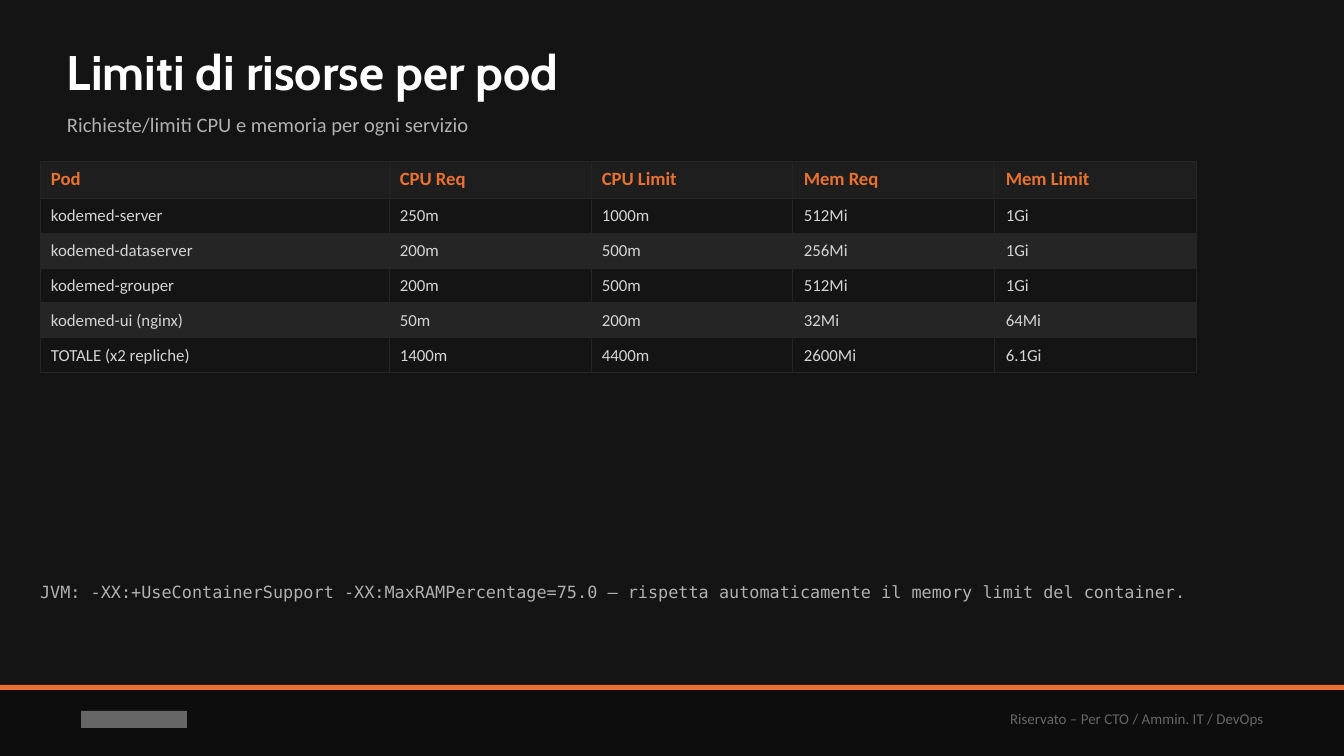
from lxml import etree
from pptx import Presentation
from pptx import util as u
from pptx.dml.color import RGBColor
from pptx.enum import shapes, text
from pptx.oxml import ns

PX = 914400 / 134.4
BACKGROUND = RGBColor(0x14, 0x14, 0x14)
FOOTER = RGBColor(0x0D, 0x0D, 0x0D)
ORANGE = RGBColor(0xE9, 0x71, 0x32)
WHITE = RGBColor(0xFF, 0xFF, 0xFF)
LIGHT = RGBColor(0xD4, 0xD4, 0xD4)
SILVER = RGBColor(0xB0, 0xB0, 0xB0)
GRAY = RGBColor(0x66, 0x66, 0x66)
HEADER = RGBColor(0x1E, 0x1E, 0x1E)
STRIPE = RGBColor(0x25, 0x25, 0x25)


def px(*lengths):
    return [u.Emu(round(length * PX)) for length in lengths]


def write(frame, words, size, color, font="Calibri", bold=False,
          align=text.PP_ALIGN.LEFT, inset=(0, 0)):
    frame.word_wrap = True
    frame.auto_size = text.MSO_AUTO_SIZE.NONE
    frame.vertical_anchor = text.MSO_ANCHOR.MIDDLE
    frame.margin_left, frame.margin_top = px(*inset)
    frame.margin_right, frame.margin_bottom = px(*inset)
    para = frame.paragraphs[0]
    para.alignment = align
    span = para.add_run()
    span.text = words
    span.font.size = u.Pt(size)
    span.font.name = font
    span.font.bold = bold
    span.font.color.rgb = color


deck = Presentation()
deck.slide_width, deck.slide_height = px(1344, 756)
page = deck.slides.add_slide(deck.slide_layouts[5])
page.background.fill.solid()
page.background.fill.fore_color.rgb = BACKGROUND

for left, top, width, height, color in [
    (0, 685, 1344, 71, FOOTER),
    (0, 685, 1344, 5, ORANGE),
    (81, 711, 106, 17, GRAY),
]:
    bar = page.shapes.add_shape(
        shapes.MSO_SHAPE.RECTANGLE, *px(left, top, width, height))
    bar.shadow.inherit = False
    bar.fill.solid()
    bar.fill.fore_color.rgb = color
    bar.line.fill.background()

audience = page.shapes.add_textbox(*px(739, 692, 538, 54))
write(audience.text_frame, "Riservato – Per CTO / Ammin. IT / DevOps", 8, GRAY,
      align=text.PP_ALIGN.RIGHT, inset=(13, 7))

title = page.shapes.title
title.left, title.top, title.width, title.height = px(67, 34, 1210, 74)
write(title.text_frame, "Limiti di risorse per pod", 26, WHITE, font="Cabin", bold=True)

subtitle = page.shapes.add_textbox(*px(67, 101, 1210, 47))
write(subtitle.text_frame, "Richieste/limiti CPU e memoria per ogni servizio", 11, SILVER)

limits = [
    ("Pod", "CPU Req", "CPU Limit", "Mem Req", "Mem Limit"),
    ("kodemed-server", "250m", "1000m", "512Mi", "1Gi"),
    ("kodemed-dataserver", "200m", "500m", "256Mi", "1Gi"),
    ("kodemed-grouper", "200m", "500m", "512Mi", "1Gi"),
    ("kodemed-ui (nginx)", "50m", "200m", "32Mi", "64Mi"),
    ("TOTALE (x2 repliche)", "1400m", "4400m", "2600Mi", "6.1Gi"),
]
table = page.shapes.add_table(
    len(limits), len(limits[0]), *px(40, 161, 1157, 212)).table
for column, width in zip(table.columns, px(349, 202, 202, 202, 202)):
    column.width = width
for row, height in zip(table.rows, px(37, 35, 35, 35, 35, 35)):
    row.height = height

for row, values in enumerate(limits):
    is_header = row == 0
    fill = HEADER if is_header else BACKGROUND if row % 2 else STRIPE
    for column, value in enumerate(values):
        cell = table.cell(row, column)
        write(cell.text_frame, value, 10 if is_header else 9,
              ORANGE if is_header else LIGHT, bold=is_header)
        cell.vertical_anchor = text.MSO_ANCHOR.MIDDLE
        cell.margin_left, cell.margin_right = px(11, 11)
        cell.margin_top, cell.margin_bottom = px(7, 7)
        properties = cell._tc.get_or_add_tcPr()
        for side in ("lnL", "lnR", "lnT", "lnB"):
            border = etree.SubElement(properties, ns.qn(f"a:{side}"), w=str(u.Pt(0.5)))
            paint = etree.SubElement(border, ns.qn("a:solidFill"))
            etree.SubElement(paint, ns.qn("a:srgbClr"), val=str(STRIPE))
        cell.fill.solid()
        cell.fill.fore_color.rgb = fill

note = page.shapes.add_textbox(*px(40, 565, 1263, 54))
write(note.text_frame,
      "JVM: -XX:+UseContainerSupport -XX:MaxRAMPercentage=75.0 — "
      "rispetta automaticamente il memory limit del container.",
      9, SILVER, font="DejaVu Sans Mono")

deck.save("out.pptx")
